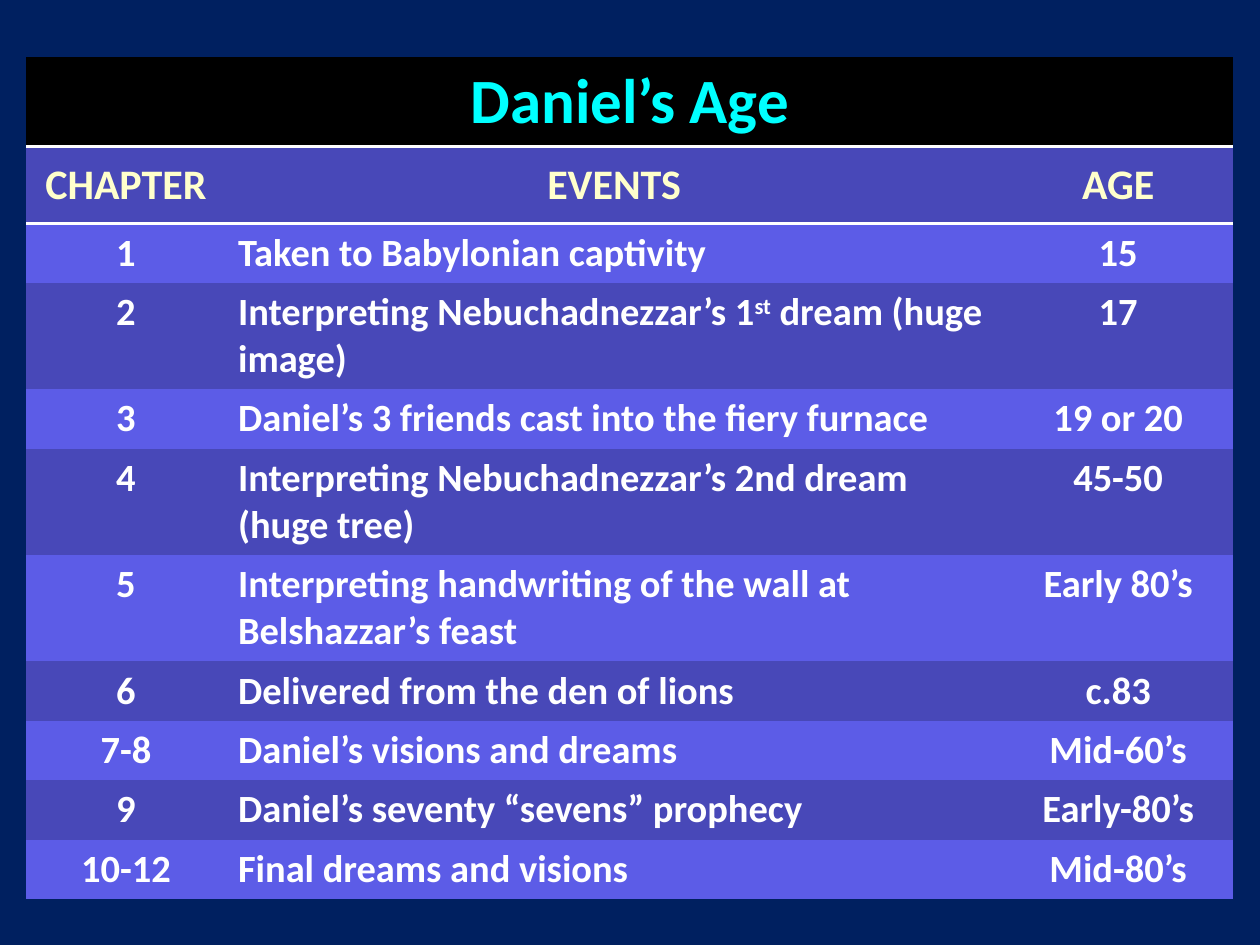
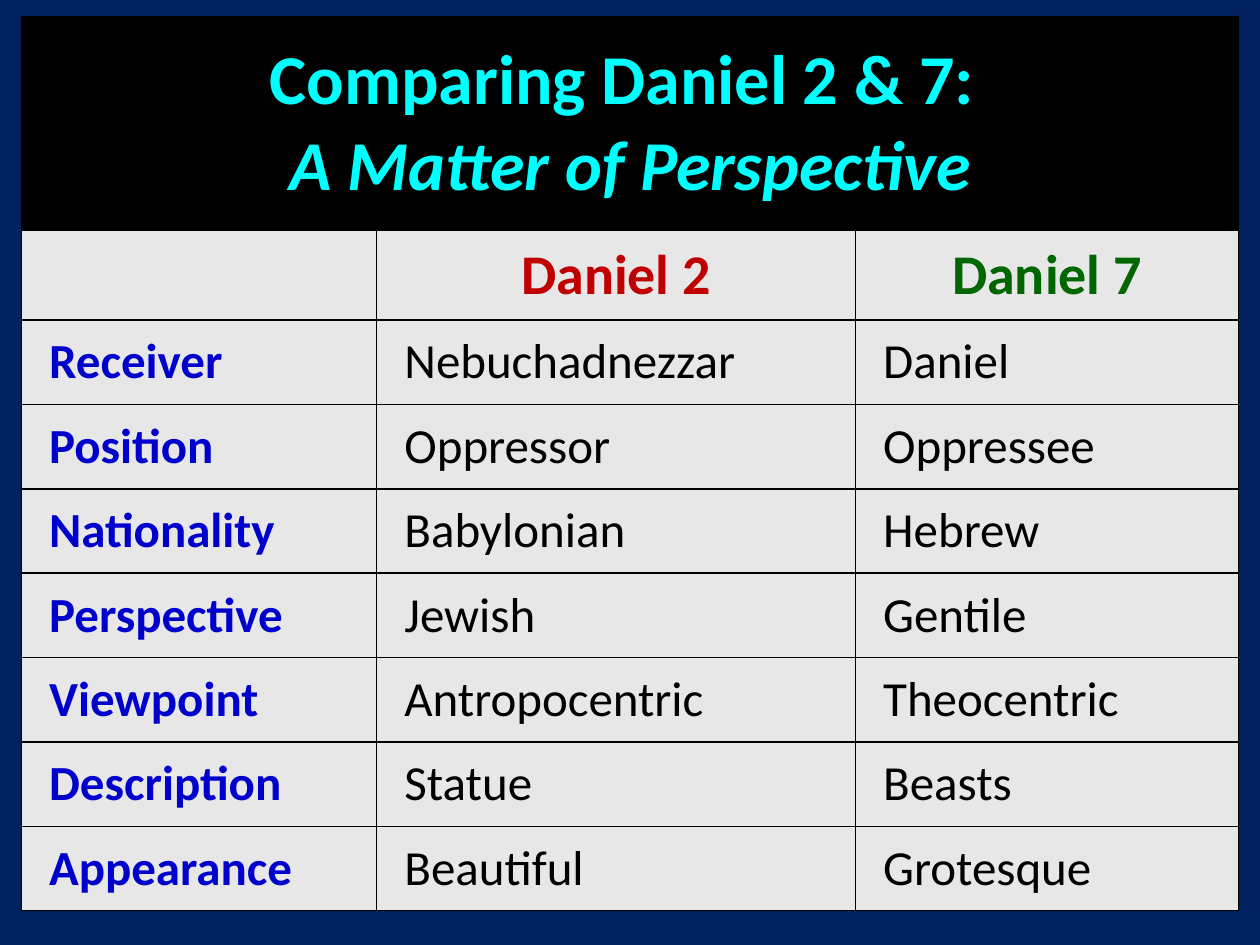
from lxml.etree import SubElement
from pptx import Presentation
from pptx.dml.color import RGBColor
from pptx.enum.text import MSO_ANCHOR, PP_ALIGN
from pptx.oxml.ns import qn
from pptx.util import Inches, Pt

NAVY, BLACK, WHITE, CYAN = "002060", "000000", "FFFFFF", "00FFFF"
CREAM, INDIGO, VIOLET = "FFFFCC", "4848B8", "5C5CE7"
GRAY, RED, GREEN, BLUE = "E7E7E7", "C00000", "006600", "0000CC"
PLAIN_TABLE = "{2D5ABB26-0587-4C30-8999-92F81FD0307C}"

AGES = [
    ("1", "Taken to Babylonian captivity", "15"),
    ("2", "Interpreting Nebuchadnezzar’s 1^st^ dream (huge image)", "17"),
    ("3", "Daniel’s 3 friends cast into the fiery furnace", "19 or 20"),
    ("4", "Interpreting Nebuchadnezzar’s 2nd dream (huge tree)", "45-50"),
    ("5", "Interpreting handwriting of the wall at Belshazzar’s feast",
     "Early 80’s"),
    ("6", "Delivered from the den of lions", "c.83"),
    ("7-8", "Daniel’s visions and dreams", "Mid-60’s"),
    ("9", "Daniel’s seventy “sevens” prophecy", "Early-80’s"),
    ("10-12", "Final dreams and visions", "Mid-80’s"),
]
TWO_LINE_CHAPTERS = ("2", "4", "5")

COMPARISON = [
    ("Receiver", "Nebuchadnezzar", "Daniel"),
    ("Position", "Oppressor", "Oppressee"),
    ("Nationality", "Babylonian", "Hebrew"),
    ("Perspective", "Jewish", "Gentile"),
    ("Viewpoint", "Antropocentric", "Theocentric"),
    ("Description", "Statue", "Beasts"),
    ("Appearance", "Beautiful", "Grotesque"),
]


def rgb(value):
    return RGBColor.from_string(value)


class TableDeck:
    font_name = "Calibri"

    def __init__(self):
        self.deck = Presentation()
        self.deck.slide_width = Inches(10)
        self.deck.slide_height = Inches(7.5)
        self.page = None

    def add_page(self):
        self.page = self.deck.slides.add_slide(self.deck.slide_layouts[6])
        background = self.page.background.fill
        background.solid()
        background.fore_color.rgb = rgb(NAVY)

    def add_table(self, left, top, widths, heights):
        """Add an unstyled table whose first row is one merged title cell."""
        frame = self.page.shapes.add_table(
            len(heights), len(widths), Inches(left), Inches(top),
            Inches(sum(widths)), Inches(sum(heights)))
        table = frame.table
        table.first_row = table.horz_banding = False
        table._tbl.tblPr.find(qn("a:tableStyleId")).text = PLAIN_TABLE
        for column, width in zip(table.columns, widths):
            column.width = Inches(width)
        for row, height in zip(table.rows, heights):
            row.height = Inches(height)
        table.cell(0, 0).merge(table.cell(0, len(widths) - 1))
        return table

    def borders(self, cells, sides, color, width):
        """Draw the given sides (letters from LRTB, in that order)."""
        for cell in cells:
            properties = cell._tc.get_or_add_tcPr()
            for side in sides:
                line = SubElement(properties, qn(f"a:ln{side}"),
                                  w=str(Pt(width)))
                solid = SubElement(line, qn("a:solidFill"))
                SubElement(solid, qn("a:srgbClr"), val=color)

    def fill(self, cell, color):
        cell.fill.solid()
        cell.fill.fore_color.rgb = rgb(color)

    def text(self, cell, text, size, color, bold=True, centered=True,
             middle=True, indent=0):
        """Write one paragraph; ^marks^ enclose superscript."""
        if middle:
            cell.vertical_anchor = MSO_ANCHOR.MIDDLE
        para = cell.text_frame.paragraphs[0]
        para.alignment = PP_ALIGN.CENTER if centered else PP_ALIGN.LEFT
        if indent:
            para._p.get_or_add_pPr().set("marL", str(Inches(indent)))
        para.font.name = self.font_name
        para.font.size = Pt(size)
        para.font.bold = bold
        para.font.color.rgb = rgb(color)
        for index, part in enumerate(text.split("^")):
            span = para.add_run()
            span.text = part
            if index % 2:
                span.font._element.set("baseline", "30000")
        return para

    def title(self, table, text, size, middle=True):
        cell = table.cell(0, 0)
        self.fill(cell, BLACK)
        return self.text(cell, text, size, CYAN, middle=middle)


def age_page(style):
    style.add_page()
    heights = [0.7, 0.61] + [0.84 if chapter in TWO_LINE_CHAPTERS else 0.47
                             for chapter, _, _ in AGES]
    table = style.add_table(0.21, 0.45, [1.58, 6.17, 1.83], heights)
    style.borders(table.rows[0].cells, "B", WHITE, 2)
    style.borders(table.rows[1].cells, "T", WHITE, 2)
    style.title(table, "Daniel’s Age", 36, middle=False)
    for column, heading in enumerate(("CHAPTER", "EVENTS", "AGE")):
        cell = table.cell(1, column)
        style.fill(cell, INDIGO)
        style.text(cell, heading, 24, CREAM)
    for row, entry in enumerate(AGES, 2):
        for column, value in enumerate(entry):
            cell = table.cell(row, column)
            style.fill(cell, INDIGO if row % 2 else VIOLET)
            style.text(cell, value, 22, WHITE, centered=column != 1,
                       middle=False)


def comparison_page(style):
    style.add_page()
    heights = [1.7, 0.71] + [0.67] * len(COMPARISON)
    table = style.add_table(0.17, 0.13, [2.82, 3.8, 3.04], heights)
    style.borders(table.iter_cells(), "LRTB", BLACK, 1)
    title = style.title(table, "Comparing Daniel 2 & 7: ", 40)
    title.add_line_break()
    subtitle = title.add_run()
    subtitle.text = "A Matter of Perspective"
    subtitle.font.italic = True
    style.fill(table.cell(1, 0), GRAY)
    for column, (heading, color) in enumerate(
            (("Daniel 2", RED), ("Daniel 7", GREEN)), 1):
        style.fill(table.cell(1, column), GRAY)
        style.text(table.cell(1, column), heading, 32, color)
    for row, entry in enumerate(COMPARISON, 2):
        for column, value in enumerate(entry):
            cell = table.cell(row, column)
            is_label = column == 0
            style.fill(cell, GRAY)
            style.text(cell, value, 28, BLUE if is_label else BLACK,
                       bold=is_label, centered=False, indent=0.12)


def main():
    style = TableDeck()
    age_page(style)
    comparison_page(style)
    style.deck.save("out.pptx")


if __name__ == "__main__":
    main()
